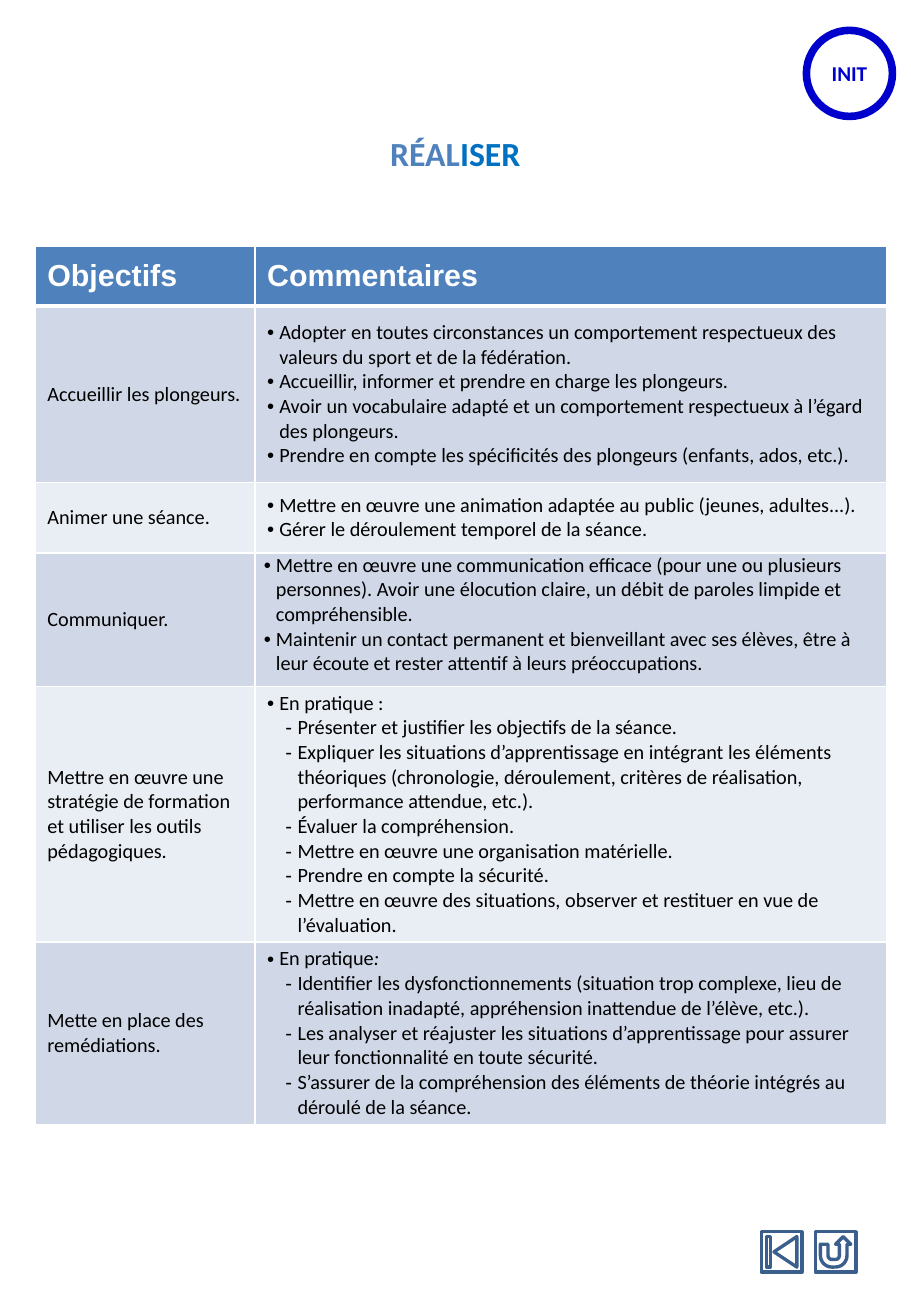
from lxml.etree import SubElement
from pptx import Presentation
from pptx.dml.color import RGBColor
from pptx.enum.shapes import MSO_SHAPE as Shape
from pptx.enum.text import MSO_ANCHOR as Anchor, MSO_AUTO_SIZE as AutoSize, PP_ALIGN as Align
from pptx.oxml.ns import qn
from pptx.util import Pt

WHITE = RGBColor(0xFF, 0xFF, 0xFF)
BLACK = RGBColor(0, 0, 0)
BADGE_BLUE = RGBColor(0, 0, 0xCC)
HEADER_BLUE = RGBColor(0x4F, 0x81, 0xBD)
TITLE_BLUE = RGBColor(0, 0x70, 0xC0)
BUTTON_BLUE = RGBColor(0x3A, 0x5F, 0x8C)
BANDS = [RGBColor(0xD0, 0xD8, 0xE8), RGBColor(0xE9, 0xED, 0xF4)]

# Bullet levels: character, left margin, hanging indent
POINT = ("•", 7.2, -7.2)
DASH = ("-", 18, -7.2)

COLUMN_WIDTHS = [130.3, 374.4]
HEADERS = ["Objectifs", "Commentaires"]

# Each row: height, objective, comments as (level, text, optional italic ending)
ROWS = [
    (104.4, "Accueillir les plongeurs.", [
        (POINT, "Adopter en toutes circonstances un comportement respectueux des valeurs du sport "
                "et de la fédération."),
        (POINT, "Accueillir, informer et prendre en charge les plongeurs."),
        (POINT, "Avoir un vocabulaire adapté et un comportement respectueux à l’égard des plongeurs."),
        (POINT, "Prendre en compte les spécificités des plongeurs (enfants, ados, etc.)."),
    ]),
    (41.8, "Animer une séance.", [
        (POINT, "Mettre en œuvre une animation adaptée au public (jeunes, adultes...)."),
        (POINT, "Gérer le déroulement temporel de la séance."),
    ]),
    (79.2, "Communiquer.", [
        (POINT, "Mettre en œuvre une communication efficace (pour une ou plusieurs personnes). "
                "Avoir une élocution claire, un débit de paroles limpide et compréhensible."),
        (POINT, "Maintenir un contact permanent et bienveillant avec ses élèves, être à leur écoute "
                "et rester attentif à leurs préoccupations."),
    ]),
    (151.2, "Mettre en œuvre une stratégie de formation et utiliser les outils pédagogiques.", [
        (POINT, "En pratique :"),
        (DASH, "Présenter et justifier les objectifs de la séance."),
        (DASH, "Expliquer les situations d’apprentissage en intégrant les éléments théoriques "
               "(chronologie, déroulement, critères de réalisation, performance attendue, etc.)."),
        (DASH, "Évaluer la compréhension."),
        (DASH, "Mettre en œuvre une organisation matérielle."),
        (DASH, "Prendre en compte la sécurité."),
        (DASH, "Mettre en œuvre des situations, observer et restituer en vue de l’évaluation."),
    ]),
    (108, "Mette en place des remédiations.", [
        (POINT, "En pratique", ":"),
        (DASH, "Identifier les dysfonctionnements (situation trop complexe, lieu de réalisation "
               "inadapté, appréhension inattendue de l’élève, etc.)."),
        (DASH, "Les analyser et réajuster les situations d’apprentissage pour assurer leur "
               "fonctionnalité en toute sécurité."),
        (DASH, "S’assurer de la compréhension des éléments de théorie intégrés au déroulé de la "
               "séance."),
    ]),
]


class SlideBuilder:
    def __init__(self, slide, font="Calibri", size=12):
        self.slide = slide
        self.font = font
        self.size = size

    def run(self, paragraph, text, color=BLACK, size=None, bold=False, italic=False, font=None):
        run = paragraph.add_run()
        run.text = text
        run.font.name = font or self.font
        run.font.size = Pt(size or self.size)
        run.font.bold = bold
        run.font.italic = italic
        run.font.color.rgb = color

    def bullet(self, paragraph, level):
        character, margin, indent = level
        properties = paragraph._p.get_or_add_pPr()
        properties.set("marL", str(Pt(margin)))
        properties.set("indent", str(Pt(indent)))
        SubElement(properties, qn("a:buFont")).set("typeface", "Arial")
        SubElement(properties, qn("a:buChar")).set("char", character)

    def title(self, left, top, width, height, parts):
        title = self.slide.shapes.title
        title.left, title.top, title.width, title.height = map(Pt, (left, top, width, height))
        frame = title.text_frame
        frame.word_wrap = True
        frame.auto_size = AutoSize.NONE
        frame.vertical_anchor = Anchor.MIDDLE
        paragraph = frame.paragraphs[0]
        paragraph.alignment = Align.CENTER
        for text, color in parts:
            self.run(paragraph, text, color, 20, bold=True)

    def shape(self, kind, left, top, side, line_color, line_width, fill=None):
        shape = self.slide.shapes.add_shape(kind, Pt(left), Pt(top), Pt(side), Pt(side))
        shape.shadow.inherit = False
        if fill is None:
            shape.fill.background()
        else:
            shape.fill.solid()
            shape.fill.fore_color.rgb = fill
        shape.line.color.rgb = line_color
        shape.line.width = Pt(line_width)
        return shape

    def badge(self, left, top, side, text):
        frame = self.shape(Shape.OVAL, left, top, side, BADGE_BLUE, 4.5, WHITE).text_frame
        frame.margin_left = frame.margin_right = 0
        frame.vertical_anchor = Anchor.MIDDLE
        frame.paragraphs[0].alignment = Align.CENTER
        self.run(frame.paragraphs[0], text, BADGE_BLUE, 12.5, bold=True)

    def style_cell(self, cell, fill, top_width=1, bottom_width=1):
        properties = cell._tc.get_or_add_tcPr()
        for side, width in (("L", 1), ("R", 1), ("T", top_width), ("B", bottom_width)):
            line = SubElement(properties, qn(f"a:ln{side}"), w=str(Pt(width)))
            color = SubElement(SubElement(line, qn("a:solidFill")), qn("a:srgbClr"))
            color.set("val", str(WHITE))
        cell.fill.solid()
        cell.fill.fore_color.rgb = fill
        cell.vertical_anchor = Anchor.MIDDLE
        cell.margin_top = cell.margin_bottom = Pt(2.6)

    def comments(self, cell, items):
        frame = cell.text_frame
        for index, (level, text, *endings) in enumerate(items):
            paragraph = frame.add_paragraph() if index else frame.paragraphs[0]
            self.bullet(paragraph, level)
            self.run(paragraph, text)
            for ending in endings:
                self.run(paragraph, ending, italic=True)

    def table(self, left, top, widths, header_height, headers, rows):
        heights = [header_height] + [row[0] for row in rows]
        table = self.slide.shapes.add_table(
            len(heights), len(widths), Pt(left), Pt(top), Pt(sum(widths)), Pt(sum(heights))).table
        for column, width in zip(table.columns, widths):
            column.width = Pt(width)
        for row, height in zip(table.rows, heights):
            row.height = Pt(height)
        for index, text in enumerate(headers):
            cell = table.cell(0, index)
            self.style_cell(cell, HEADER_BLUE, bottom_width=3)
            self.run(cell.text_frame.paragraphs[0], text, WHITE, 18, bold=True, font="Arial")
        for index, (_, objective, items) in enumerate(rows, 1):
            cells = [table.cell(index, column) for column in range(len(widths))]
            for cell in cells:
                self.style_cell(cell, BANDS[(index - 1) % 2], top_width=3 if index == 1 else 1)
            self.run(cells[0].text_frame.paragraphs[0], objective)
            self.comments(cells[1], items)
        return table


def main():
    presentation = Presentation()
    presentation.slide_width = Pt(540)
    presentation.slide_height = Pt(780)
    builder = SlideBuilder(presentation.slides.add_slide(presentation.slide_layouts[5]))

    # Badge and title
    builder.badge(478, 18, 51, "INIT")
    builder.title(86.4, 75, 367, 31.5, [("RÉAL", HEADER_BLUE), ("ISER", TITLE_BLUE)])

    # Objectives table; the communication comments sit at the top of their cell
    table = builder.table(20.9, 146.2, COLUMN_WIDTHS, 35.3, HEADERS, ROWS)
    communication = table.cell(3, 1)
    communication.vertical_anchor = Anchor.TOP
    communication.margin_left = communication.margin_right = Pt(5.2)
    communication.margin_top = communication.margin_bottom = 0

    # Navigation buttons
    for kind, left in ((Shape.ACTION_BUTTON_BEGINNING, 451.3), (Shape.ACTION_BUTTON_RETURN, 483.3)):
        builder.shape(kind, left, 730, 24, BUTTON_BLUE, 2)

    presentation.save("out.pptx")


if __name__ == "__main__":
    main()
